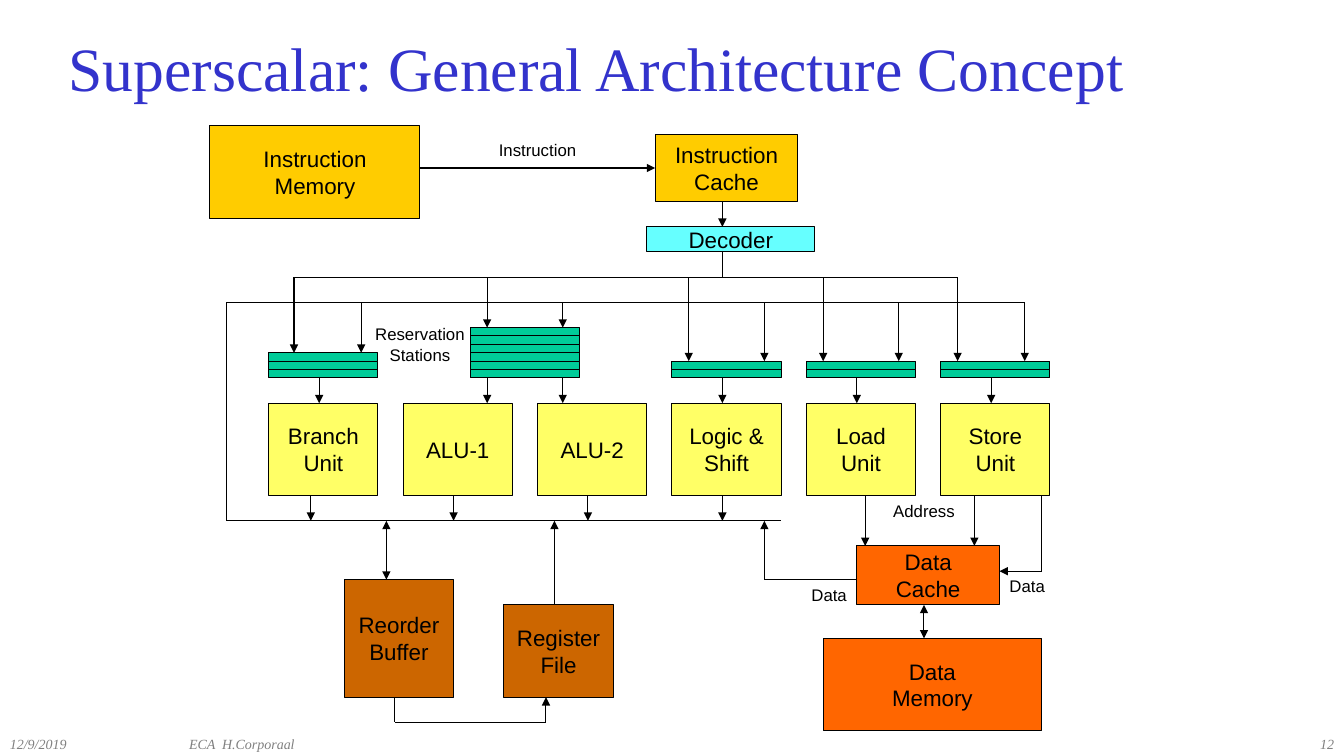
from lxml.etree import SubElement
from pptx import Presentation
from pptx.dml.color import RGBColor
from pptx.enum.shapes import MSO_CONNECTOR as Link, MSO_SHAPE as Shape
from pptx.enum.text import MSO_ANCHOR as Anchor, PP_ALIGN as Align
from pptx.oxml.ns import qn
from pptx.util import Cm, Pt

BLACK = RGBColor(0x00, 0x00, 0x00)
GREY = RGBColor(0x80, 0x80, 0x80)
BLUE = RGBColor(0x33, 0x33, 0xCC)
GOLD = RGBColor(0xFF, 0xCC, 0x00)
CYAN = RGBColor(0x66, 0xFF, 0xFF)
YELLOW = RGBColor(0xFF, 0xFF, 0x66)
GREEN = RGBColor(0x00, 0xCC, 0x99)
BROWN = RGBColor(0xCC, 0x66, 0x00)
ORANGE = RGBColor(0xFF, 0x66, 0x00)

GRID = 2.54 / 12
LEFT_SIDE = 1

UNIT_TOP, UNIT_W, UNIT_H, UNIT_PITCH = 48, 13, 11, 16
UNIT_BOTTOM = UNIT_TOP + UNIT_H
STATION_BOTTOM = 45
DECODE_BUS, OPERAND_BUS, RESULT_BUS = 33, 36, 62

UNITS = ["Branch\nUnit", "ALU-1", "ALU-2", "Logic &\nShift", "Load\nUnit", "Store\nUnit"]

# left, entries, decode arrow x, operand arrow x, issue arrows x
STATIONS = [
    (32, 3, 35, 43, [38]),
    (56, 6, 58, 67, [58, 67]),
    (80, 2, 82, 91, [86]),
    (96, 2, 98, 107, [102]),
    (112, 2, 114, 122, [118]),
]

# label, left, top, width, height, fill
BLOCKS = [
    ("Instruction\nMemory", 25, 15, 25, 11, GOLD),
    ("Decoder", 77, 27, 20, 3, CYAN),
    ("Reorder\nBuffer", 41, 69, 13, 14, BROWN),
    ("Register\nFile", 60, 72, 13, 11, BROWN),
    ("Data\nCache", 102, 65, 17, 7, ORANGE),
    ("Data\nMemory", 98, 76, 26, 11, ORANGE),
]

# label, left, top, height, alignment
LABELS = [
    ("Reservation Stations", 43, 38, 6, Align.CENTER),
    ("Address", 103, 59, 3.6, Align.CENTER),
    ("Data", 119, 68, 3.6, Align.LEFT),
    ("Data", 88, 69, 3.6, Align.RIGHT),
    ("Instruction", 57, 16, 3.6, Align.CENTER),
]

# label, left, width, alignment
FOOTERS = [
    ("12/9/2019", 0, 21.33, Align.LEFT),
    ("ECA  H.Corporaal", 21.33, 50.67, Align.LEFT),
    ("12", 126.67, 33.33, Align.RIGHT),
]


def grid(n):
    """Length of n grid steps, twelve to the inch."""
    return Cm(n * GRID)


def write(tf, text, size=16, font="Arial", color=BLACK, italic=False,
          align=Align.CENTER, anchor=Anchor.MIDDLE, wrap=False):
    tf.word_wrap = wrap
    tf.vertical_anchor = anchor
    for i, line in enumerate(text.split("\n")):
        p = tf.add_paragraph() if i else tf.paragraphs[0]
        p.alignment = align
        r = p.add_run()
        r.text = line
        r.font.size = Pt(size)
        r.font.name = font
        r.font.italic = italic
        r.font.color.rgb = color


class Diagram:
    line_width = Pt(0.75)

    def __init__(self, slide):
        self.shapes = slide.shapes

    def box(self, x, y, w, h, fill, text=""):
        sp = self.shapes.add_shape(Shape.RECTANGLE, *map(grid, (x, y, w, h)))
        sp.shadow.inherit = False
        sp.fill.solid()
        sp.fill.fore_color.rgb = fill
        sp.line.color.rgb = BLACK
        sp.line.width = self.line_width
        if text:
            write(sp.text_frame, text)
        return sp

    def label(self, x, y, w, h, text, **style):
        sp = self.shapes.add_textbox(*map(grid, (x, y, w, h)))
        write(sp.text_frame, text, wrap=True, **style)

    def line(self, x1, y1, x2, y2, start=False, end=False):
        """Straight line; start and end tell which ends carry an arrowhead."""
        cxn = self.shapes.add_connector(Link.STRAIGHT, *map(grid, (x1, y1, x2, y2)))
        cxn.line.color.rgb = BLACK
        cxn.line.width = self.line_width
        ln = cxn.line._get_or_add_ln()
        for tag, wanted in (("a:headEnd", start), ("a:tailEnd", end)):
            if wanted:
                SubElement(ln, qn(tag)).set("type", "triangle")
        SubElement(cxn._element.spPr, qn("a:effectLst"))
        return cxn

    def arrow(self, x1, y1, x2, y2, both=False):
        return self.line(x1, y1, x2, y2, start=both, end=True)


def draw_front_end(d):
    cache = d.box(78, 16, 17, 8, GOLD, "Instruction\nCache")
    d.arrow(50, 20, 78, 20).end_connect(cache, LEFT_SIDE)
    d.arrow(86, 24, 86, 27)
    d.line(86, 30, 86, DECODE_BUS)


def draw_stations(d):
    d.line(STATIONS[0][2], DECODE_BUS, STATIONS[-1][2], DECODE_BUS)
    d.line(27, OPERAND_BUS, STATIONS[-1][3], OPERAND_BUS)
    for x, entries, decode_x, operand_x, issue_xs in STATIONS:
        top = STATION_BOTTOM - entries
        for y in range(top, STATION_BOTTOM):
            d.box(x, y, UNIT_W, 1, GREEN)
        d.arrow(decode_x, DECODE_BUS, decode_x, top)
        d.arrow(operand_x, OPERAND_BUS, operand_x, top)
        for issue_x in issue_xs:
            d.arrow(issue_x, STATION_BOTTOM, issue_x, UNIT_TOP)


def draw_results(d):
    d.line(27, RESULT_BUS, 93, RESULT_BUS)
    d.line(27, RESULT_BUS, 27, OPERAND_BUS)
    for x in (37, 54, 70, 86):
        d.arrow(x, UNIT_BOTTOM, x, RESULT_BUS)
    d.arrow(46, 69, 46, RESULT_BUS, both=True)
    d.arrow(66, 72, 66, RESULT_BUS)
    d.line(47, 83, 47, 86)
    d.line(47, 86, 65, 86)
    d.arrow(65, 86, 65, 83)


def draw_data_paths(d):
    for x in (103, 116):
        d.arrow(x, UNIT_BOTTOM, x, 65)
    d.line(124, UNIT_BOTTOM, 124, 68)
    d.arrow(124, 68, 119, 68)
    d.line(102, 69, 91, 69)
    d.arrow(91, 69, 91, RESULT_BUS)
    d.arrow(110, 72, 110, 76, both=True)


def main():
    prs = Presentation()
    prs.slide_width, prs.slide_height = grid(160), grid(90)
    d = Diagram(prs.slides.add_slide(prs.slide_layouts[6]))

    d.label(7, 3, 149.33, 10, "Superscalar: General Architecture Concept",
            size=44, font="Times New Roman", color=BLUE, align=Align.LEFT)
    for text, x, w, align in FOOTERS:
        d.label(x, 87, w, 3, text, size=10, font="Times New Roman", color=GREY,
                italic=True, align=align, anchor=Anchor.TOP)

    for text, x, y, w, h, fill in BLOCKS:
        d.box(x, y, w, h, fill, text)
    for i, text in enumerate(UNITS):
        d.box(32 + i * UNIT_PITCH, UNIT_TOP, UNIT_W, UNIT_H, YELLOW, text)

    draw_front_end(d)
    draw_stations(d)
    draw_results(d)
    draw_data_paths(d)

    for text, x, y, h, align in LABELS:
        d.label(x, y, 14, h, text, size=12, align=align, anchor=Anchor.TOP)

    prs.save("out.pptx")


if __name__ == "__main__":
    main()
